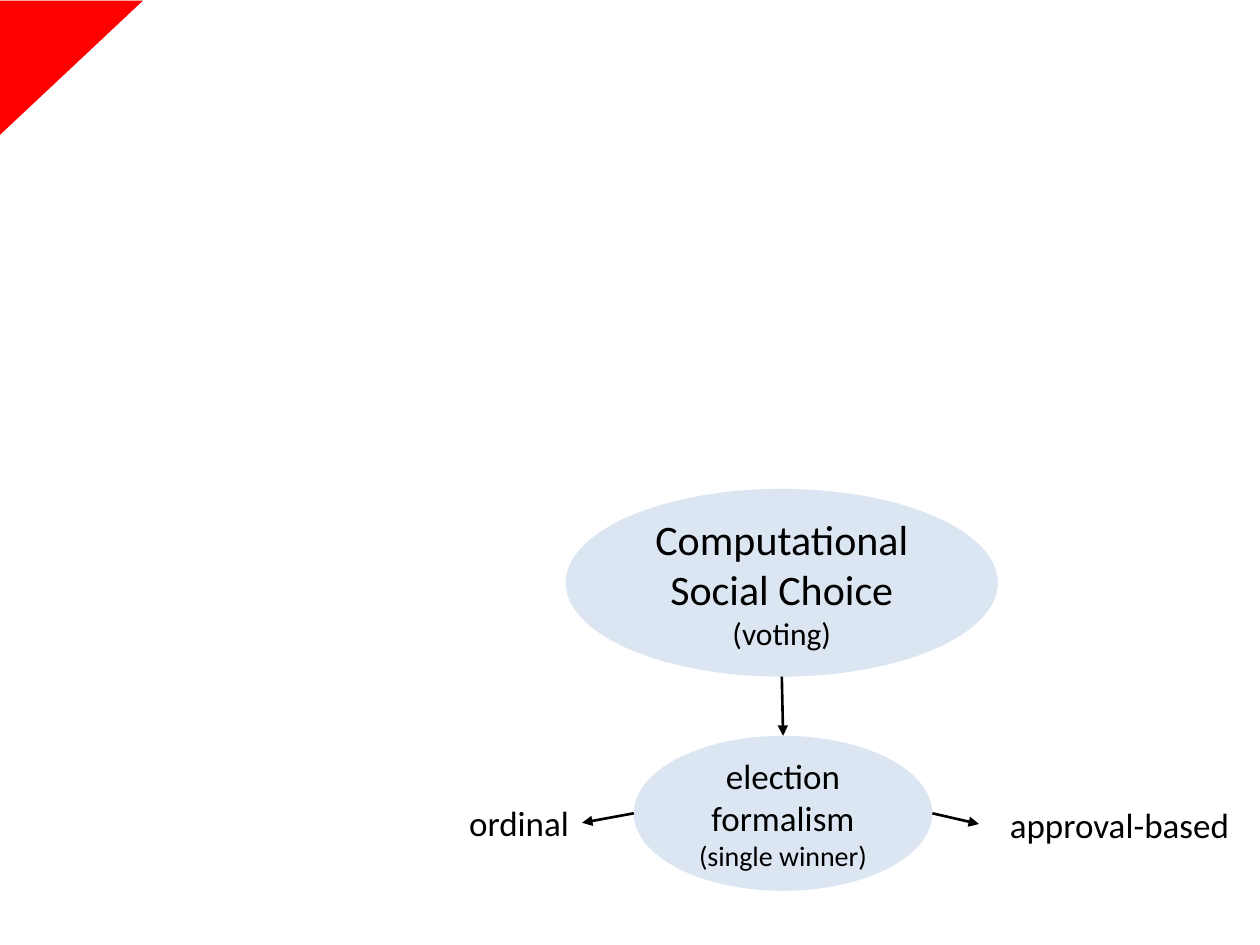
"""Build a slide that maps voting to its election formalisms."""
import pptx
import pptx.dml.color
import pptx.enum.shapes
import pptx.enum.text
import pptx.oxml
import pptx.oxml.ns
import pptx.util
from pptx.util import Inches

RED = pptx.dml.color.RGBColor(0xFF, 0x00, 0x00)
PALE_BLUE = pptx.dml.color.RGBColor(0xDC, 0xE6, 0xF2)
BLACK = pptx.dml.color.RGBColor(0x00, 0x00, 0x00)


class Diagram:
    font = "Calibri"
    line_width = pptx.util.Pt(1.5)

    def __init__(self, slide):
        self.slide = slide

    def shape(self, preset, left, top, width, height, color):
        shape = self.slide.shapes.add_shape(
            preset, Inches(left), Inches(top), Inches(width), Inches(height))
        shape.shadow.inherit = False
        shape.fill.solid()
        shape.fill.fore_color.rgb = color
        shape.line.fill.background()
        return shape

    def set_lines(self, frame, lines):
        for index, (text, size) in enumerate(lines):
            paragraph = frame.add_paragraph() if index else frame.paragraphs[0]
            paragraph.text = text
            paragraph.alignment = pptx.enum.text.PP_ALIGN.CENTER
            paragraph.font.name = self.font
            paragraph.font.size = pptx.util.Pt(size)
            paragraph.font.color.rgb = BLACK

    def corner(self, left, top, width, height):
        triangle = self.shape(pptx.enum.shapes.MSO_SHAPE.RIGHT_TRIANGLE,
                              left, top, width, height, RED)
        triangle.rotation = 90

    def topic(self, left, top, width, height, lines):
        ellipse = self.shape(pptx.enum.shapes.MSO_SHAPE.OVAL,
                             left, top, width, height, PALE_BLUE)
        ellipse.text_frame.word_wrap = True
        ellipse.text_frame.vertical_anchor = pptx.enum.text.MSO_ANCHOR.MIDDLE
        self.set_lines(ellipse.text_frame, lines)
        return ellipse

    def label(self, left, top, width, text):
        box = self.slide.shapes.add_textbox(
            Inches(left), Inches(top), Inches(width), Inches(0.44))
        box.text_frame.word_wrap = False
        self.set_lines(box.text_frame, [(text, 20)])

    def arrow(self, start, end):
        connector = self.slide.shapes.add_connector(
            pptx.enum.shapes.MSO_CONNECTOR.STRAIGHT, *start, *end)
        connector.line.color.rgb = BLACK
        connector.line.width = self.line_width
        namespace = pptx.oxml.ns.nsdecls("a")
        properties = connector._element.spPr
        properties.find(pptx.oxml.ns.qn("a:ln")).append(
            pptx.oxml.parse_xml(f'<a:tailEnd {namespace} type="triangle"/>'))
        properties.append(pptx.oxml.parse_xml(f"<a:effectLst {namespace}/>"))


def main():
    deck = pptx.Presentation()
    deck.slide_width, deck.slide_height = Inches(10), Inches(7.5)
    diagram = Diagram(deck.slides.add_slide(deck.slide_layouts[6]))

    diagram.corner(0.03, -0.03, 1.07, 1.14)
    field = diagram.topic(4.49, 3.88, 3.43, 1.49, [
        ("Computational Social Choice", 24), ("(voting)", 18)])
    formalism = diagram.topic(5.03, 5.84, 2.37, 1.23, [
        ("election formalism", 20), ("(single winner)", 16)])
    diagram.label(7.77, 6.33, 2.23, "approval-based")
    diagram.label(3.62, 6.31, 1, "ordinal")

    formalism_right = formalism.left + formalism.width
    formalism_center = formalism.left + formalism.width // 2
    formalism_middle = formalism.top + formalism.height // 2
    diagram.arrow((field.left + field.width // 2, field.top + field.height),
                  (formalism_center, formalism.top))
    diagram.arrow((formalism_right, formalism_middle), (Inches(7.77), Inches(6.54)))
    diagram.arrow((formalism.left, formalism_middle), (Inches(4.62), Inches(6.53)))

    deck.save("out.pptx")


if __name__ == "__main__":
    main()
